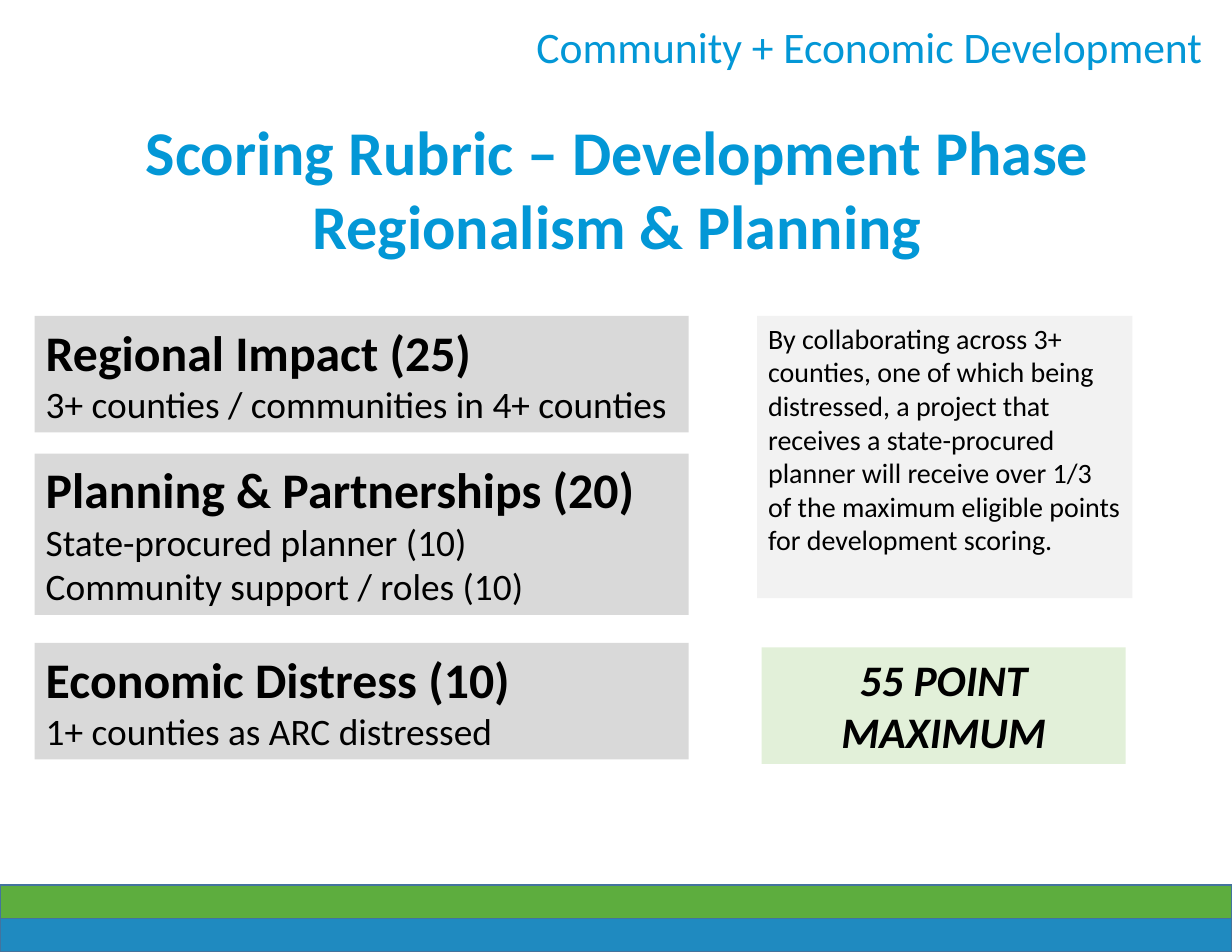
from pptx import Presentation
from pptx.dml.color import RGBColor
from pptx.enum.shapes import MSO_SHAPE
from pptx.enum.text import PP_ALIGN
from pptx.util import Inches, Pt

SKY = RGBColor(0x03, 0x97, 0xD6)
BLUE = RGBColor(0x1F, 0x8A, 0xC0)
GREEN = RGBColor(0x5D, 0xAD, 0x3E)
BAND_EDGE = RGBColor(0x43, 0x73, 0x9E)
GREY = RGBColor(0xD9, 0xD9, 0xD9)
PALE_GREY = RGBColor(0xF2, 0xF2, 0xF2)
PALE_GREEN = RGBColor(0xE2, 0xF0, 0xD9)
BLACK = RGBColor(0, 0, 0)

WIDTH, HEIGHT = 11, 8.5
LEFT_COLUMN, CRITERION_WIDTH = 0.31, 5.84
FIRST_ROW = 2.82

prs = Presentation()
prs.slide_width, prs.slide_height = Inches(WIDTH), Inches(HEIGHT)
slide = prs.slides.add_slide(prs.slide_layouts[6])


def add_text(area, lines, color=BLACK, align=PP_ALIGN.LEFT, fill=None):
    """Place a text box; each line is (wording, size, bold, italic)."""
    box = slide.shapes.add_textbox(*map(Inches, area))
    if fill is not None:
        box.fill.solid()
        box.fill.fore_color.rgb = fill
    frame = box.text_frame
    frame.word_wrap = True
    for i, (wording, size, bold, italic) in enumerate(lines):
        paragraph = frame.add_paragraph() if i else frame.paragraphs[0]
        paragraph.text = wording
        paragraph.alignment = align
        font = paragraph.font
        font.name, font.size = "Calibri", Pt(size)
        font.bold, font.italic = bold, italic
        font.color.rgb = color


# Footer bands
for top, height, color in [(7.91, 0.59, BLUE), (7.9, 0.3, GREEN)]:
    band = slide.shapes.add_shape(
        MSO_SHAPE.RECTANGLE, 0, Inches(top), prs.slide_width, Inches(height))
    band.shadow.inherit = False
    band.fill.solid()
    band.fill.fore_color.rgb = color
    band.line.color.rgb = BAND_EDGE
    band.line.width = Pt(1)

# Department and title
add_text((3.47, 0.13, 7.36, 0.57),
         [("Community + Economic Development", 28, False, False)],
         SKY, PP_ALIGN.RIGHT)
add_text((0.44, 0.96, 10.14, 1.45),
         [("Scoring Rubric – Development Phase", 40, True, False),
          ("Regionalism & Planning", 40, True, False)],
         SKY, PP_ALIGN.CENTER)

# Scoring criteria: top, heading, details
criteria = [
    (FIRST_ROW, "Regional Impact (25)",
     ["3+ counties / communities in 4+ counties"]),
    (4.05, "Planning & Partnerships (20)",
     ["State-procured planner (10)", "Community support / roles (10)"]),
    (5.74, "Economic Distress (10)", ["1+ counties as ARC distressed"]),
]
for top, heading, details in criteria:
    height = 0.64 + 0.4 * len(details)
    add_text((LEFT_COLUMN, top, CRITERION_WIDTH, height),
             [(heading, 32, True, False)]
             + [(detail, 24, False, False) for detail in details],
             fill=GREY)

# Explanation and total
add_text((6.76, FIRST_ROW, 3.35, 2.52),
         [("By collaborating across 3+ counties, one of which being distressed, "
           "a project that receives a state-procured planner will receive over "
           "1/3 of the maximum eligible points for development scoring.",
           18, False, False)],
         fill=PALE_GREY)
add_text((6.8, 5.78, 3.25, 1.04), [("55 POINT MAXIMUM", 28, True, True)],
         align=PP_ALIGN.CENTER, fill=PALE_GREEN)

prs.save("out.pptx")
